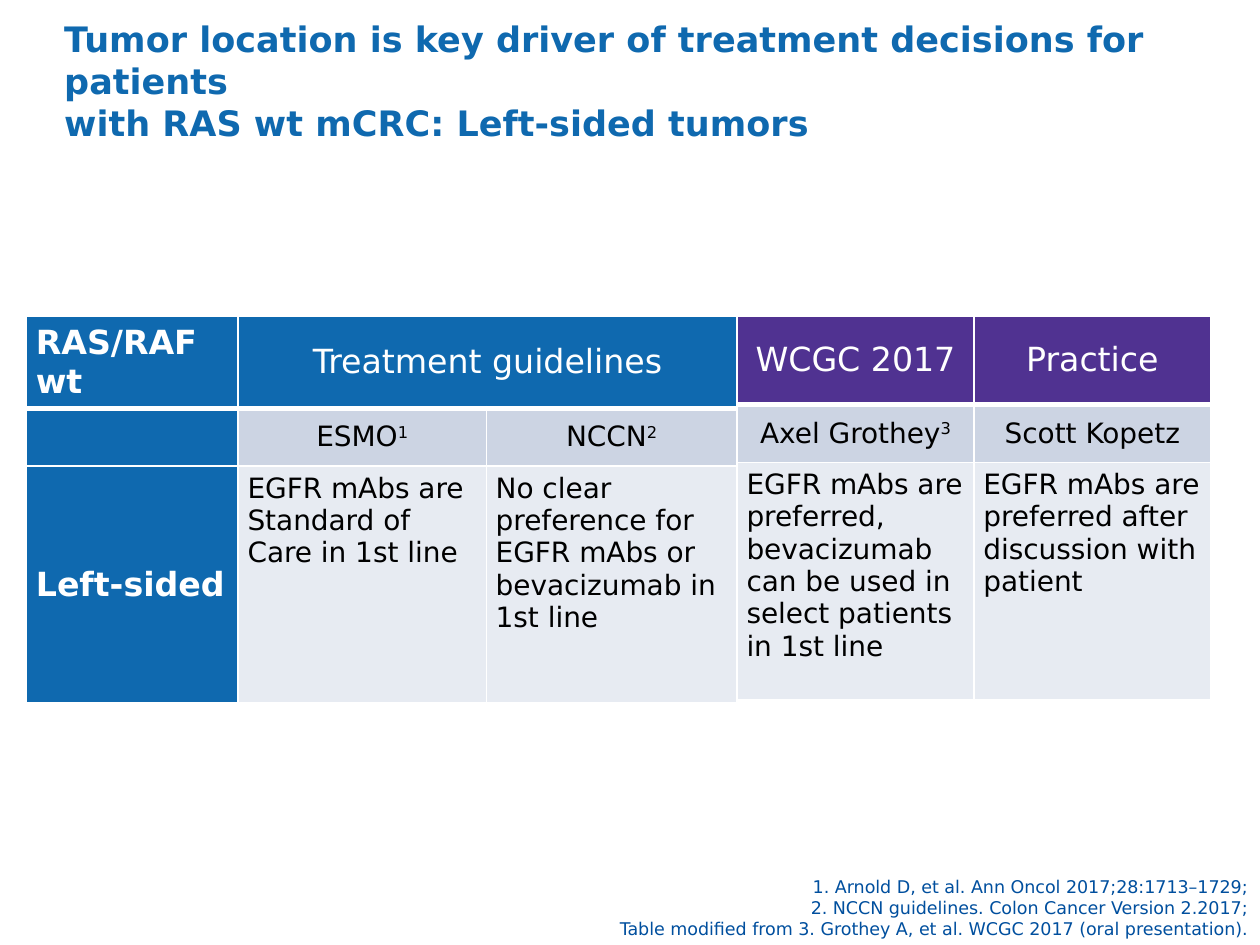
from copy import deepcopy

from lxml import etree
from pptx import Presentation, util as u
from pptx.dml.color import RGBColor
from pptx.enum import text as t
from pptx.oxml.ns import qn

FONT = "DejaVu Sans"
WHITE, BLACK, BLUE, PURPLE = "FFFFFF", "000000", "0F69AF", "503291"
NAVY, MID, PALE = "004F9E", "CCD4E3", "E7EBF2"
HEAD = dict(size=19, color=WHITE, bold=False)
SIDE = dict(HEAD, bold=True)
BODY = dict(size=16, color=BLACK, bold=False)
MIDDLE, TOP = t.MSO_ANCHOR.MIDDLE, t.MSO_ANCHOR.TOP
CENTER, LEFT = t.PP_ALIGN.CENTER, t.PP_ALIGN.LEFT


def grid(n):
    """Length of n units on a grid of 100 columns by 75 rows."""
    return u.Inches(n / 10)


def paint(fill, color):
    fill.solid()
    fill.fore_color.rgb = RGBColor.from_string(color)


def style(font, size, color, bold):
    for key, val in dict(name=FONT, size=u.Pt(size), bold=bold).items():
        setattr(font, key, val)
    paint(font.fill, color)


def write(para, words, form, align, note=""):
    """Fill a paragraph; note is set as a superscript."""
    para.text, para.alignment = words, align
    if note:
        run = para.add_run()
        run.text = note
        run.font._element.set("baseline", "30000")
    for run in para.runs:
        style(run.font, **form)
    for br in para._p.findall(qn("a:br")):
        br.append(deepcopy(para.runs[0].font._element))


def edge(cell, low):
    """White cell borders, with the given width in points at the bottom."""
    props = cell._tc.get_or_add_tcPr()
    for i, side in enumerate("LRTB"):
        wide = low if side == "B" else 1
        line = etree.Element(qn("a:ln" + side), w=str(u.Pt(wide)))
        fill = etree.SubElement(line, qn("a:solidFill"))
        etree.SubElement(fill, qn("a:srgbClr"), val=WHITE)
        props.insert(i, line)


def title(slide, box, words):
    shape = slide.shapes.title
    shape.left, shape.top, shape.width, shape.height = map(grid, box)
    paint(shape.fill, WHITE)
    frame = shape.text_frame
    form = dict(margin_left=0, margin_right=0, margin_top=0,
                margin_bottom=grid(0.2), word_wrap=True,
                vertical_anchor=t.MSO_ANCHOR.BOTTOM,
                auto_size=t.MSO_AUTO_SIZE.NONE)
    for key, val in form.items():
        setattr(frame, key, val)
    para = frame.paragraphs[0]
    write(para, words, dict(size=20, color=BLUE, bold=True), LEFT)
    para.line_spacing = u.Pt(24)


def table(slide, box, cols, rows, data, tint, side=False):
    """Three-row table; cols and rows are shares of the box."""
    left, top, wide, high = box
    tab = slide.shapes.add_table(len(rows), len(cols), *map(grid, box)).table
    tab.first_row = tab.horz_banding = False
    for col, part in zip(tab.columns, cols):
        col.width = grid(wide * part / sum(cols))
    for row, part in zip(tab.rows, rows):
        row.height = grid(high * part / sum(rows))
    for r, line in enumerate(data):
        for c, item in enumerate(line):
            cell = tab.cell(r, c)
            label = side and c == 0
            cell.margin_left = cell.margin_right = grid(0.75)
            cell.margin_top = cell.margin_bottom = grid(0.5)
            cell.vertical_anchor = TOP if r == 2 and not label else MIDDLE
            paint(cell.fill, tint if label else (tint, MID, PALE)[r])
            edge(cell, 3 if r == 0 else 1)
            if item:
                words, _, note = item.partition("^")
                form = SIDE if label else HEAD if r == 0 else BODY
                align = LEFT if label or r == 2 else CENTER
                write(cell.text_frame.paragraphs[0], words, form, align, note)
    return tab


def sources(slide, box, words):
    frame = slide.shapes.add_textbox(*map(grid, box)).text_frame
    frame.word_wrap = True
    frame.vertical_anchor = t.MSO_ANCHOR.BOTTOM
    write(frame.paragraphs[0], words,
          dict(size=10, color=NAVY, bold=False), t.PP_ALIGN.RIGHT)


def main():
    deck = Presentation()
    deck.slide_width, deck.slide_height = grid(100), grid(75)
    slide = deck.slides.add_slide(deck.slide_layouts[5])
    title(slide, (5.1, 1.3, 89.8, 10.3),
          "Tumor location is key driver of treatment decisions for patients "
          "\vwith RAS wt mCRC: Left-sided tumors")
    guide = table(
        slide, (2.1, 25.1, 56.4, 30.7), (1.68, 1.97, 1.99), (0.73, 0.46, 1.88),
        [["RAS/RAF wt", "Treatment guidelines", ""],
         ["", "ESMO^1", "NCCN^2"],
         ["Left-sided", "EGFR mAbs are Standard of Care in 1st line",
          "No clear preference for EGFR mAbs or bevacizumab in 1st line"]],
        BLUE, side=True)
    guide.cell(0, 1).merge(guide.cell(0, 2))
    sources(slide, (35.7, 68.9, 64.3, 6.1),
            "1. Arnold D, et al. Ann Oncol 2017;28:1713–1729;\v"
            "2. NCCN guidelines. Colon Cancer Version 2.2017;\v"
            "Table modified from 3. Grothey A, et al. WCGC 2017 "
            "(oral presentation).")
    table(
        slide, (58.5, 25.1, 37.6, 30.4), (1, 1), (0.7, 0.46, 1.88),
        [["WCGC 2017", "Practice"],
         ["Axel Grothey^3", "Scott Kopetz"],
         ["EGFR mAbs are preferred, bevacizumab can be used in select "
          "patients in 1st line",
          "EGFR mAbs are preferred after discussion with patient"]],
        PURPLE)
    deck.save("out.pptx")


if __name__ == "__main__":
    main()
